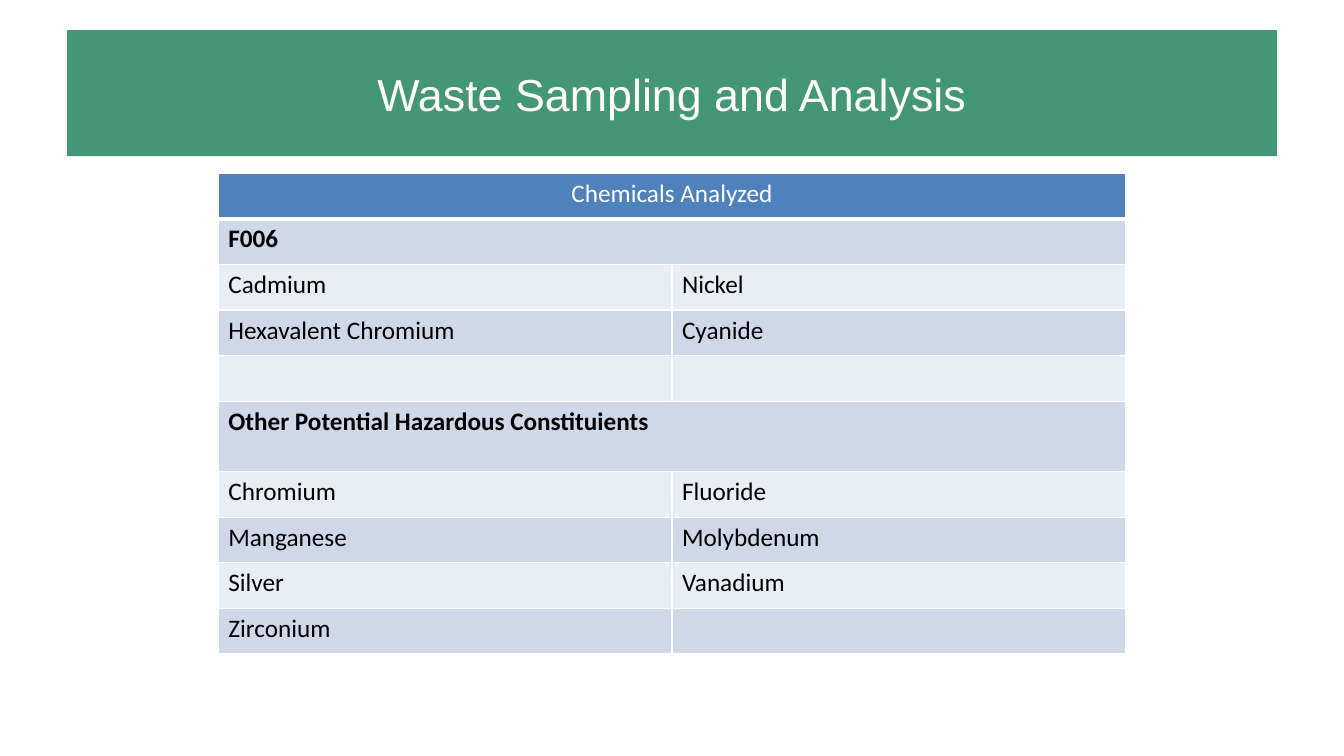
from dataclasses import dataclass

from lxml.etree import SubElement
from pptx import Presentation
from pptx.dml.color import RGBColor
from pptx.enum.text import MSO_ANCHOR, MSO_AUTO_SIZE, PP_ALIGN
from pptx.oxml.ns import qn
from pptx.util import Inches, Pt


@dataclass(frozen=True)
class Theme:
    banner: str = "439777"
    header: str = "4F81BD"
    bands: tuple = ("E9EDF4", "D0D8E8")
    light: str = "FFFFFF"
    dark: str = "000000"
    title_font: str = "Arial"
    table_font: str = "Calibri"
    title_size: int = 32
    table_size: int = 18
    rule: int = 1
    header_rule: int = 3


THEME = Theme()
WIDTH, HEIGHT = Inches(13.33), Inches(7.5)
TABLE_HEIGHT, TALL_ROW = Inches(4.77), Inches(0.7)
OTHER_HEADING = "Other Potential Hazardous Constituients"
CHEMICALS = [
    ("Chemicals Analyzed",),
    ("F006",),
    ("Cadmium", "Nickel"),
    ("Hexavalent Chromium", "Cyanide"),
    ("", ""),
    (OTHER_HEADING,),
    ("Chromium", "Fluoride"),
    ("Manganese", "Molybdenum"),
    ("Silver", "Vanadium"),
    ("Zirconium", ""),
]


def paint(fill, color):
    fill.solid()
    fill.fore_color.rgb = RGBColor.from_string(color)


def style_paragraph(para, font, size, color, align=PP_ALIGN.LEFT, bold=False):
    para.alignment = align
    para.font.name = font
    para.font.size = Pt(size)
    para.font.bold = bold
    para.font.color.rgb = RGBColor.from_string(color)


def add_banner(page, text):
    box = page.shapes.title
    box.left, box.top = round(WIDTH * 0.05), round(HEIGHT * 0.04)
    box.width, box.height = round(WIDTH * 0.9), Inches(1.25)
    paint(box.fill, THEME.banner)
    frame = box.text_frame
    frame.text = text
    frame.auto_size = MSO_AUTO_SIZE.NONE
    frame.vertical_anchor = MSO_ANCHOR.MIDDLE
    style_paragraph(frame.paragraphs[0], THEME.title_font, THEME.title_size,
                    THEME.light, PP_ALIGN.CENTER)


def rule_cell(cell, bottom):
    properties = cell._tc.get_or_add_tcPr()
    widths = {"lnL": THEME.rule, "lnR": THEME.rule, "lnT": THEME.rule, "lnB": bottom}
    for position, (side, width) in enumerate(widths.items()):
        line = SubElement(properties, qn(f"a:{side}"), w=str(Pt(width)))
        SubElement(SubElement(line, qn("a:solidFill")), qn("a:srgbClr"), val=THEME.light)
        properties.insert(position, line)


def fill_cell(cell, text, row, heading):
    header = row == 0
    cell.text = text
    style_paragraph(cell.text_frame.paragraphs[0], THEME.table_font, THEME.table_size,
                    THEME.light if header else THEME.dark,
                    PP_ALIGN.CENTER if header else PP_ALIGN.LEFT,
                    heading and not header)
    paint(cell.fill, THEME.header if header else THEME.bands[row % 2])
    rule_cell(cell, THEME.header_rule if header else THEME.rule)


def add_chemicals(page, rows):
    width = Inches(9)
    table = page.shapes.add_table(len(rows), 2, (WIDTH - width) // 2, Inches(1.72),
                                  width, TABLE_HEIGHT).table
    plain_row = (TABLE_HEIGHT - TALL_ROW) // (len(rows) - 1)
    for row, texts in enumerate(rows):
        table.rows[row].height = TALL_ROW if texts[0] == OTHER_HEADING else plain_row
        heading = len(texts) == 1
        for column in range(2):
            text = texts[column] if column < len(texts) else ""
            fill_cell(table.cell(row, column), text, row, heading)
        if heading:
            table.cell(row, 0).merge(table.cell(row, 1))


def main():
    deck = Presentation()
    deck.slide_width, deck.slide_height = WIDTH, HEIGHT
    page = deck.slides.add_slide(deck.slide_layouts[5])
    add_banner(page, "Waste Sampling and Analysis")
    add_chemicals(page, CHEMICALS)
    deck.save("out.pptx")


if __name__ == "__main__":
    main()
